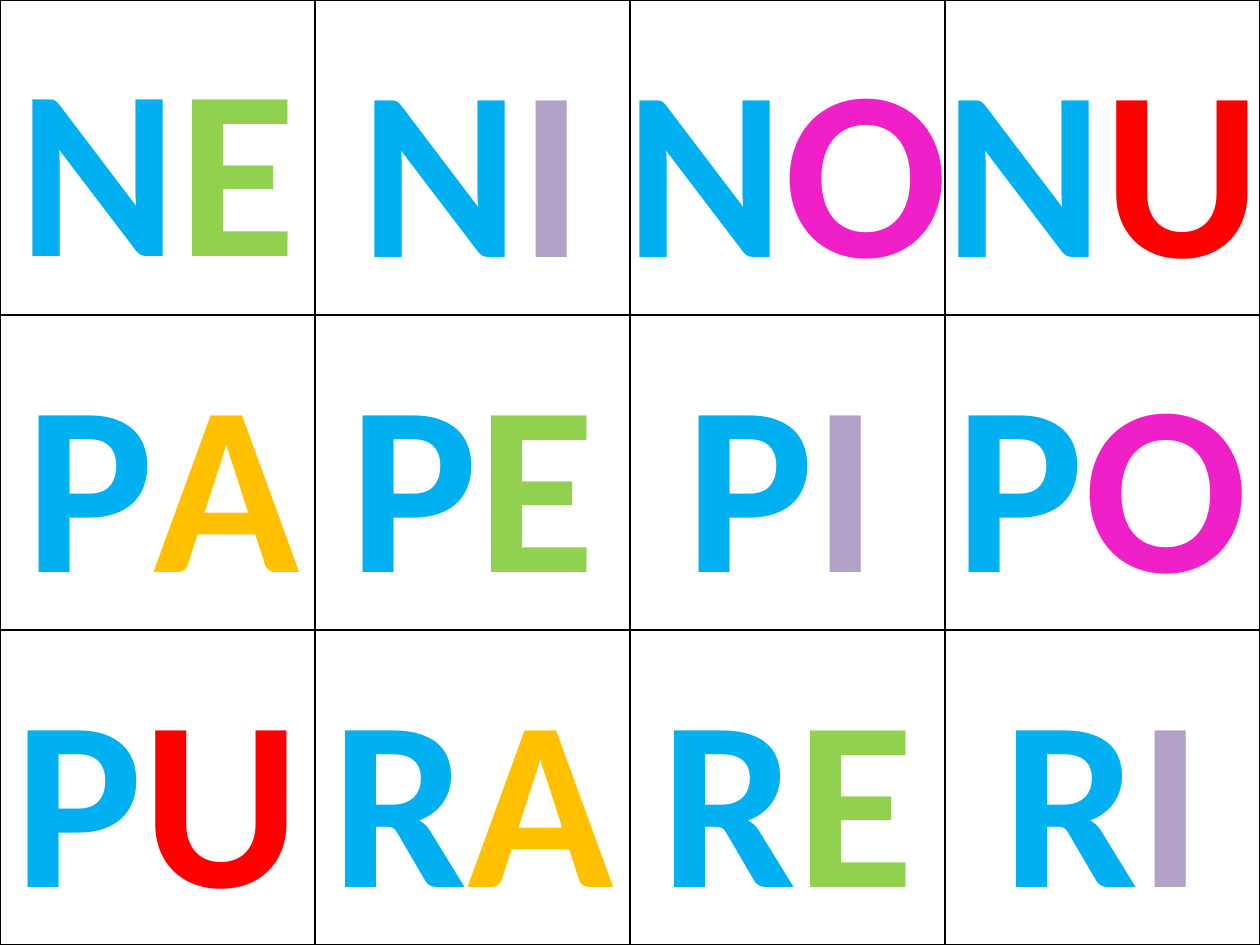
import pptx
import pptx.dml.color
import pptx.enum.text
import pptx.oxml
import pptx.util
from lxml import etree

Pt = pptx.util.Pt
NS = "http://schemas.openxmlformats.org/drawingml/2006/main"


def rgb(value):
    return pptx.dml.color.RGBColor.from_string(value)


def outline(tag, color):
    return pptx.oxml.parse_xml(
        f'<a:{tag} xmlns:a="{NS}" w="12700"><a:solidFill>'
        f'<a:srgbClr val="{color}"/></a:solidFill></a:{tag}>'
    )


CARD = 180
CONSONANT = "00B0F0"
VOWELS = {"A": "FFC000", "E": "92D050", "I": "B3A2C7", "O": "F020C8", "U": "FF0000"}

syllable_rows = [
    [("NE", 0, 180), ("NI", 180, 180), ("NO", 348.5, 202.3), ("NU", 523.4, 213.8)],
    [("PA", 0, 185.8), ("PE", 180, 180), ("PI", 348.5, 196.6), ("PO", 528.5, 202.3)],
    [("PU", -5.8, 191.5), ("RA", 174.2, 191.5), ("RE", 360, 180), ("RI", 540, 180)],
]

deck = pptx.Presentation()
deck.slide_width, deck.slide_height = Pt(4 * CARD), Pt(3 * CARD)
slide = deck.slides.add_slide(deck.slide_layouts[6])

grid = slide.shapes.add_table(3, 4, 0, 0, Pt(4 * CARD), Pt(3 * CARD)).table
grid.first_row = False
grid.horz_banding = False
for cell in grid.iter_cells():
    cell.fill.solid()
    cell.fill.fore_color.rgb = rgb("FFFFFF")
    properties = cell._tc.get_or_add_tcPr()
    for position, side in enumerate(("lnL", "lnR", "lnT", "lnB")):
        properties.insert(position, outline(side, "000000"))

for row, syllables in enumerate(syllable_rows):
    for syllable, left, width in syllables:
        top = 5 if syllable == "NE" else row * CARD + 5.8
        card = slide.shapes.add_textbox(Pt(left), Pt(top), Pt(width), Pt(174.2))
        frame = card.text_frame
        frame.word_wrap = True
        frame.auto_size = pptx.enum.text.MSO_AUTO_SIZE.SHAPE_TO_FIT_TEXT
        line = frame.paragraphs[0]
        line.alignment = pptx.enum.text.PP_ALIGN.CENTER
        line.font.name = "Calibri"
        line.font.size = Pt(138)
        line.font.bold = True
        for letter in syllable:
            run = line.add_run()
            run.text = letter
            run.font.color.rgb = rgb(VOWELS.get(letter, CONSONANT))
            run._r.get_or_add_rPr().insert(0, outline("ln", "054697"))

deck.save("out.pptx")
